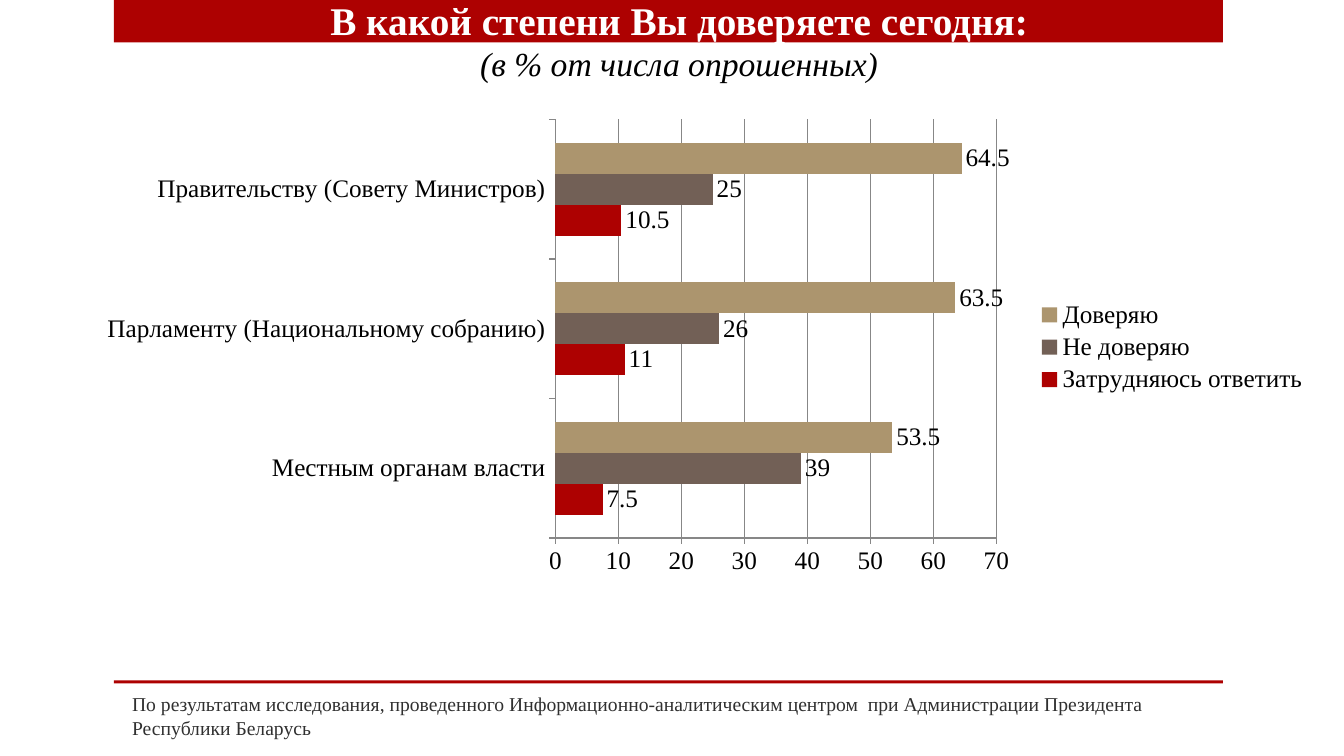
from lxml import etree
from pptx import Presentation
from pptx.chart.data import CategoryChartData
from pptx.dml.color import RGBColor
from pptx.enum.chart import XL_CHART_TYPE, XL_LABEL_POSITION, XL_LEGEND_POSITION, XL_TICK_MARK
from pptx.enum.shapes import MSO_SHAPE
from pptx.enum.text import MSO_ANCHOR, MSO_AUTO_SIZE, PP_ALIGN
from pptx.oxml.ns import qn
from pptx.util import Inches, Pt

RECTANGLE = MSO_SHAPE.RECTANGLE
BAR_CLUSTERED = XL_CHART_TYPE.BAR_CLUSTERED
OUTSIDE_END = XL_LABEL_POSITION.OUTSIDE_END
LEGEND_RIGHT = XL_LEGEND_POSITION.RIGHT
TICK_OUT, TICK_NONE = XL_TICK_MARK.OUTSIDE, XL_TICK_MARK.NONE
TOP, MIDDLE = MSO_ANCHOR.TOP, MSO_ANCHOR.MIDDLE
LEFT, CENTER = PP_ALIGN.LEFT, PP_ALIGN.CENTER
NO_AUTOFIT = MSO_AUTO_SIZE.NONE

RED = RGBColor(0xAD, 0x01, 0x01)
BROWN = RGBColor(0x72, 0x60, 0x56)
SAND = RGBColor(0xAC, 0x95, 0x6E)
GRAY = RGBColor(0x87, 0x87, 0x87)
DARK = RGBColor(0x30, 0x30, 0x30)
BLACK = RGBColor(0, 0, 0)
WHITE = RGBColor(0xFF, 0xFF, 0xFF)
FONT = "Times New Roman"

INSTITUTIONS = [
    "Местным органам власти",
    "Парламенту (Национальному собранию)",
    "Правительству (Совету Министров)",
]
ANSWERS = [
    ("Затрудняюсь ответить", (7.5, 11, 10.5), RED),
    ("Не доверяю", (39, 26, 25), BROWN),
    ("Доверяю", (53.5, 63.5, 64.5), SAND),
]


def place(placeholder, left, top, width, height, anchor):
    """Move a placeholder to its box and fix its frame."""
    placeholder.left, placeholder.top = Inches(left), Inches(top)
    placeholder.width, placeholder.height = Inches(width), Inches(height)
    frame = placeholder.text_frame
    frame.word_wrap = True
    frame.auto_size = NO_AUTOFIT
    frame.vertical_anchor = anchor
    return frame


def write(paragraph, text, *, size, color, align=LEFT, bold=False, italic=False):
    paragraph.alignment = align
    run = paragraph.add_run()
    run.text = text
    font = run.font
    font.name, font.size, font.bold, font.italic = FONT, Pt(size), bold, italic
    font.color.rgb = color


def add_band(slide, left, top, width, height):
    """Red band, kept behind the text."""
    band = slide.shapes.add_shape(
        RECTANGLE, Inches(left), Inches(top), Inches(width), Inches(height))
    band.shadow.inherit = False
    band.fill.solid()
    band.fill.fore_color.rgb = RED
    band.line.fill.background()
    slide.shapes.title.element.addprevious(band.element)


def add_heading(slide, left, top, width, height):
    add_band(slide, left, top, width, height)
    heading = place(slide.shapes.title, left + 2.01, top - 0.09, 7.19, 0.98, TOP)
    # The question fills the box, so it needs the full width for one line
    heading.margin_left = heading.margin_right = 0
    write(heading.paragraphs[0], "В какой степени Вы доверяете сегодня:",
          size=28, color=WHITE, align=CENTER, bold=True)
    write(heading.add_paragraph(), "(в % от числа опрошенных)",
          size=24, color=BLACK, align=CENTER, italic=True)


def add_trust_chart(slide, left, top, width, height):
    trust_data = CategoryChartData()
    trust_data.categories = INSTITUTIONS
    for answer, shares, _ in ANSWERS:
        trust_data.add_series(answer, shares)
    chart = slide.shapes.add_chart(
        BAR_CLUSTERED, Inches(left), Inches(top), Inches(width), Inches(height),
        trust_data).chart
    chart.has_title = False
    chart.font.name, chart.font.size = FONT, Pt(18)
    chart.font.color.rgb = BLACK

    # Bars and value labels
    plot = chart.plots[0]
    plot.gap_width = 150
    plot.vary_by_categories = False
    for series, (_, _, color) in zip(plot.series, ANSWERS):
        series.format.fill.solid()
        series.format.fill.fore_color.rgb = color
        labels = series.data_labels
        labels.show_value = True
        labels.position = OUTSIDE_END

    # Axes and grid
    category_axis, value_axis = chart.category_axis, chart.value_axis
    value_axis.has_major_gridlines = True
    for axis in (category_axis, value_axis):
        axis.major_tick_mark, axis.minor_tick_mark = TICK_OUT, TICK_NONE
    for ruled in (category_axis, value_axis, value_axis.major_gridlines):
        ruled.format.line.color.rgb = GRAY
        ruled.format.line.width = Pt(1)

    # Legend
    chart.has_legend = True
    chart.legend.position = LEGEND_RIGHT
    chart.legend.include_in_layout = False


def add_source_note(slide, left, top, width):
    add_band(slide, left, top, width, 0.03)
    note = place(slide.placeholders[1], left + 0.08, top + 0.08, 10.96, 0.54, MIDDLE)
    paragraph = note.paragraphs[0]
    write(paragraph,
          "По результатам исследования, проведенного Информационно-аналитическим "
          "центром  при Администрации Президента Республики Беларусь",
          size=14, color=DARK)
    # Plain text without a bullet or indent
    properties = paragraph._p.get_or_add_pPr()
    properties.set("marL", "0")
    properties.set("indent", "0")
    etree.SubElement(properties, qn("a:buNone"))


def main():
    deck = Presentation()
    deck.slide_width, deck.slide_height = Inches(13.33), Inches(7.5)
    slide = deck.slides.add_slide(deck.slide_layouts[1])
    add_heading(slide, 1.13, 0, 11, 0.42)
    add_trust_chart(slide, 0.82, 1.09, 12.26, 4.71)
    add_source_note(slide, 1.13, 6.75, 11)
    deck.save("out.pptx")


if __name__ == "__main__":
    main()
